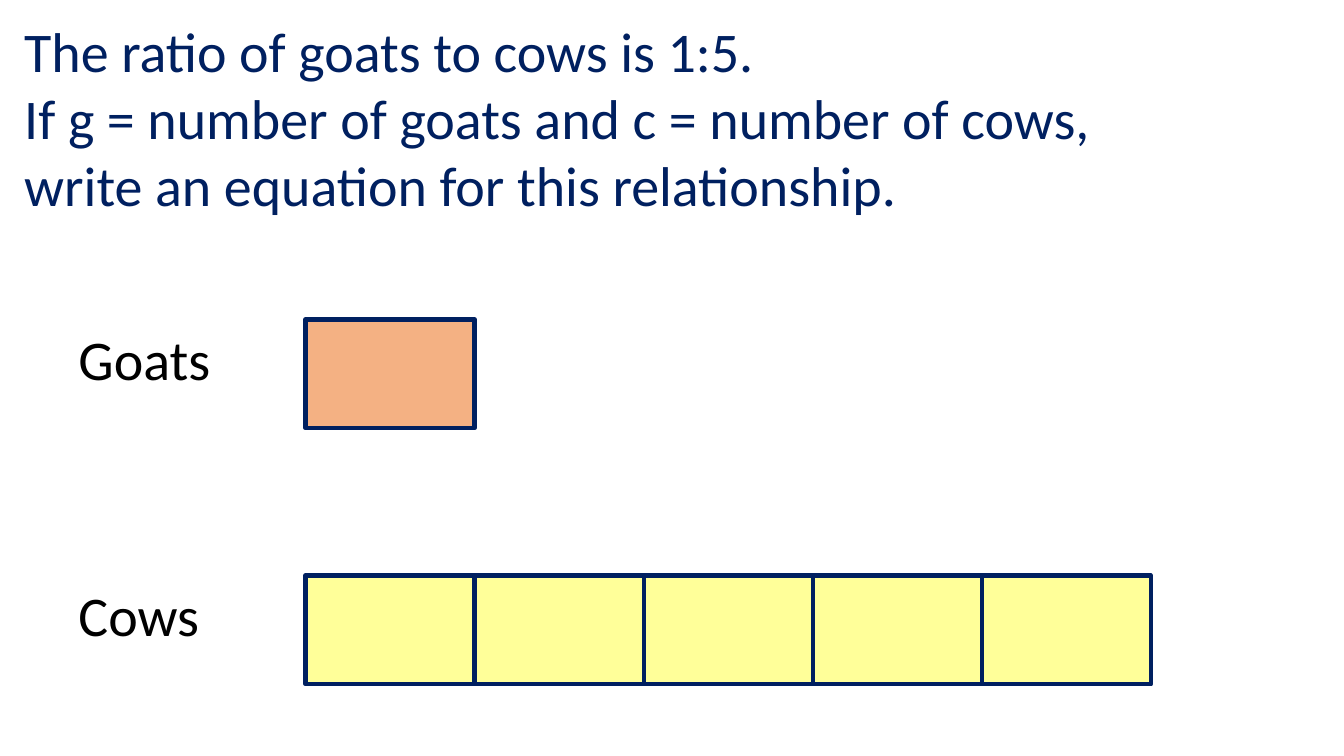
from pptx import Presentation
from pptx.dml.color import RGBColor
from pptx.enum.shapes import MSO_SHAPE
from pptx.enum.text import MSO_ANCHOR, MSO_AUTO_SIZE, PP_ALIGN
from pptx.util import Inches, Pt

NAVY = RGBColor(0x00, 0x20, 0x60)
BLACK = RGBColor(0x00, 0x00, 0x00)
ORANGE = RGBColor(0xF4, 0xB1, 0x83)
YELLOW = RGBColor(0xFF, 0xFF, 0x99)

TITLE_ONLY = 5
FRAME_FORMAT = {
    "word_wrap": True,
    "auto_size": MSO_AUTO_SIZE.NONE,
    "vertical_anchor": MSO_ANCHOR.TOP,
}
PARAGRAPH_FORMAT = {
    "alignment": PP_ALIGN.LEFT,
    "line_spacing": 1.0,
    "space_before": Pt(0),
}
FONT_FORMAT = {"name": "Calibri", "size": Pt(40), "bold": False}

QUESTION = [
    "The ratio of goats to cows is 1:5.",
    "If g = number of goats and c = number of cows,",
    "write an equation for this relationship.",
]
# Label, number of parts, part colour, top in inches
BARS = [("Goats", 1, ORANGE, 3.17), ("Cows", 5, YELLOW, 5.71)]

LABEL_WIDTH, LABEL_HEIGHT = 1.68, 0.77
BAR_OFFSET = 2.35
PART_WIDTH, PART_HEIGHT = 1.677, 1.08


def set_attributes(target, values):
    for name, value in values.items():
        setattr(target, name, value)


def write_text(shape, lines, color):
    frame = shape.text_frame
    frame.text = "\n".join(lines)
    set_attributes(frame, FRAME_FORMAT)
    for paragraph in frame.paragraphs:
        set_attributes(paragraph, PARAGRAPH_FORMAT)
        for run in paragraph.runs:
            set_attributes(run.font, FONT_FORMAT)
            run.font.color.rgb = color


def add_question(slide, left, top, width, height):
    title = slide.shapes.title
    box = {"left": left, "top": top, "width": width, "height": height}
    set_attributes(title, {name: Inches(value) for name, value in box.items()})
    write_text(title, QUESTION, NAVY)


def add_ratio_bar(slide, left, top, label, parts, color):
    """Place a label and, to its right, a row of equal touching parts."""
    label_box = slide.shapes.add_textbox(
        Inches(left), Inches(top), Inches(LABEL_WIDTH), Inches(LABEL_HEIGHT))
    write_text(label_box, [label], BLACK)
    for index in range(parts):
        part_left = left + BAR_OFFSET + index * PART_WIDTH
        part = slide.shapes.add_shape(
            MSO_SHAPE.RECTANGLE, Inches(part_left), Inches(top),
            Inches(PART_WIDTH), Inches(PART_HEIGHT))
        part.shadow.inherit = False
        part.fill.solid()
        part.fill.fore_color.rgb = color
        part.line.color.rgb = NAVY
        part.line.width = Pt(3)


def main():
    presentation = Presentation()
    presentation.slide_width = Inches(13.33)
    presentation.slide_height = Inches(7.5)
    slide = presentation.slides.add_slide(presentation.slide_layouts[TITLE_ONLY])
    add_question(slide, 0.14, 0.11, 13.05, 2.12)
    for label, parts, color, top in BARS:
        add_ratio_bar(slide, 0.68, top, label, parts, color)
    presentation.save("out.pptx")


if __name__ == "__main__":
    main()
